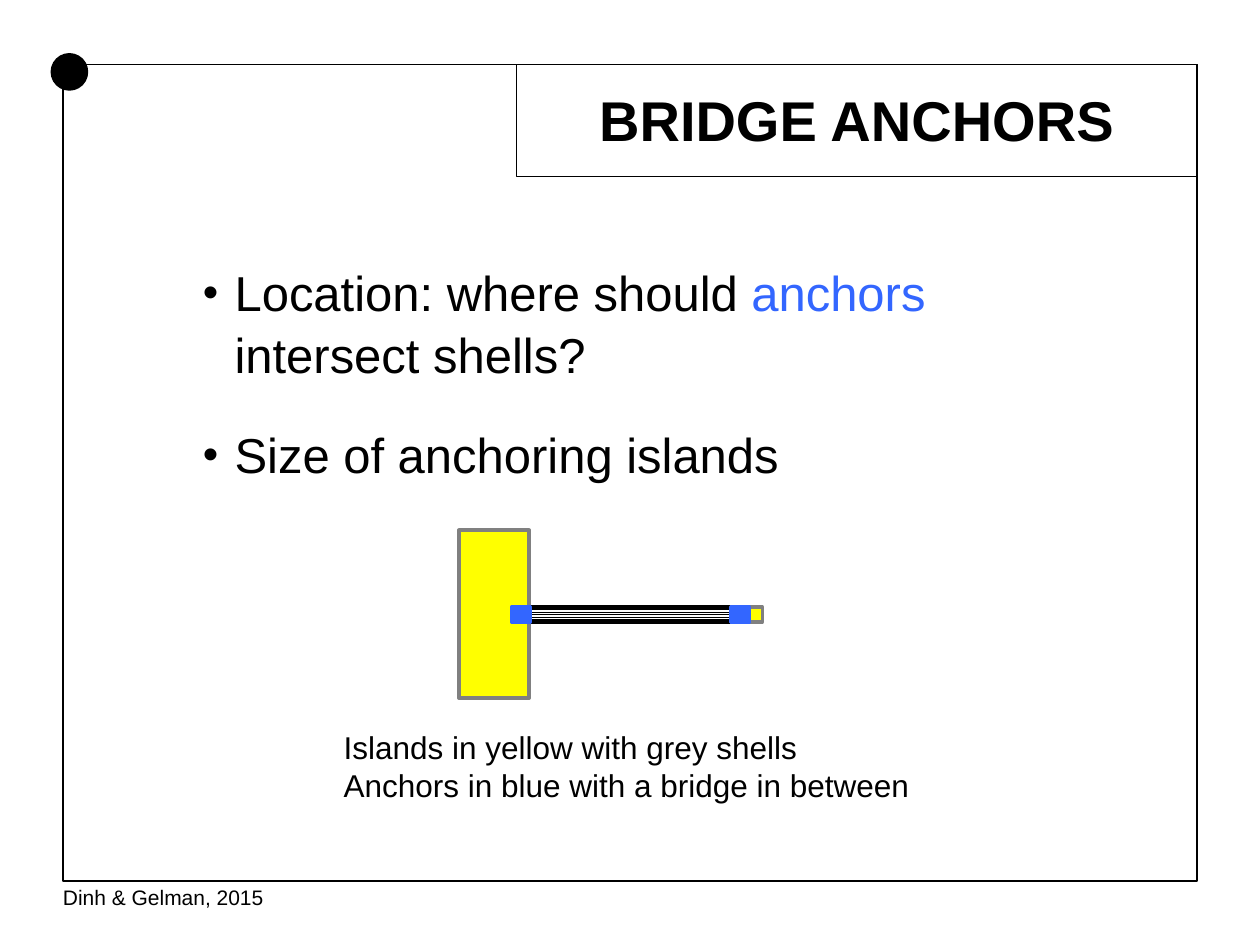
from lxml.etree import SubElement
from pptx import Presentation
from pptx.dml.color import RGBColor
from pptx.enum.dml import MSO_PATTERN as Pattern
from pptx.enum.shapes import MSO_SHAPE as Preset
from pptx.enum.text import MSO_ANCHOR as Anchor, PP_ALIGN as Align
from pptx.oxml.ns import qn
from pptx.util import Cm, Pt

COLORS = {name: RGBColor.from_string(value) for name, value in {
    "black": "000000", "white": "FFFFFF", "blue": "3366FF",
    "yellow": "FFFF00", "grey": "808080"}.items()}

deck = Presentation()
deck.slide_width, deck.slide_height = Cm(25.4), Cm(19.05)
slide = deck.slides.add_slide(deck.slide_layouts[6])


def add_outline(preset, box, fill=None, line="black", weight=0.75):
    """Add a preset shape; box is left, top, width, height in cm."""
    shape = slide.shapes.add_shape(preset, *map(Cm, box))
    shape.shadow.inherit = False
    if fill:
        shape.fill.solid()
        shape.fill.fore_color.rgb = COLORS[fill]
    else:
        shape.fill.background()
    shape.line.color.rgb = COLORS[line]
    shape.line.width = Pt(weight)
    return shape


def add_text(box, paragraphs, size, bold=False, wrap=True):
    """Add a text box; each paragraph is a list of (text, colour) runs."""
    frame = slide.shapes.add_textbox(*map(Cm, box)).text_frame
    frame.word_wrap = wrap
    for index, runs in enumerate(paragraphs):
        paragraph = frame.add_paragraph() if index else frame.paragraphs[0]
        for text, color in runs:
            run = paragraph.add_run()
            run.text = text
            run.font.name, run.font.size, run.font.bold = "Arial", Pt(size), bold
            run.font.color.rgb = COLORS[color]
    return frame


# Page frame
add_outline(Preset.RECTANGLE, (1.27, 1.3, 22.86, 16.46))
add_outline(Preset.RECTANGLE, (10.41, 1.3, 13.72, 2.26))
corner_dot = add_outline(Preset.OVAL, (1.02, 1.07, 0.76, 0.76), fill="black")
corner_dot.line.fill.background()
add_text((1.02, 17.7, 4.6, 0.76), [[("Dinh & Gelman, 2015", "black")]], 12, wrap=False)

# Title
title = add_text((10.41, 1.4, 13.72, 2.26), [[("BRIDGE ANCHORS", "black")]], 32, bold=True)
title.vertical_anchor = Anchor.MIDDLE
title.paragraphs[0].alignment = Align.CENTER
title.paragraphs[0].line_spacing = 0.8

# Questions
questions = add_text((3.84, 5.11, 18.54, 10.59), [
    [("Location: where should ", "black"), ("anchors ", "blue"),
     ("intersect shells?", "black")],
    [("Size of anchoring islands", "black")],
], 28)
for index, question in enumerate(questions.paragraphs):
    question.line_spacing = 1.05
    if index:
        question.space_before = Pt(22)
    properties = question._p.get_or_add_pPr()
    properties.set("marL", str(Cm(0.64)))
    properties.set("indent", str(-Cm(0.64)))
    SubElement(properties, qn("a:buSzPct"), val="90000")
    SubElement(properties, qn("a:buFont"), typeface="Arial")
    SubElement(properties, qn("a:buChar"), char="•")

# Bridge between two islands
bridge_left, bridge_width = 10.67, 4.06
bridge_right = bridge_left + bridge_width
bridge_top, bridge_height = 12.24, 0.3
island_width, anchor_width = 1.42, 0.38

bridge = add_outline(Preset.RECTANGLE,
                     (bridge_left, bridge_top, bridge_width, bridge_height), weight=2)
bridge.fill.patterned()
bridge.fill.pattern = Pattern.LIGHT_HORIZONTAL
bridge.fill.fore_color.rgb = COLORS["black"]
bridge.fill.back_color.rgb = COLORS["white"]

for left, top, width, height, fill, line in [
    (bridge_left - island_width, 10.69, island_width, 3.38, "yellow", "grey"),
    (bridge_right, bridge_top, 0.64, bridge_height, "yellow", "grey"),
    (bridge_left - 0.36, bridge_top, anchor_width, bridge_height, "blue", "blue"),
    (bridge_right, bridge_top, anchor_width, bridge_height, "blue", "blue"),
]:
    add_outline(Preset.RECTANGLE, (left, top, width, height), fill, line, 2)

add_text((6.68, 14.55, 12.04, 1.8), [
    [("Islands in yellow with grey shells", "black")],
    [("Anchors in blue with a bridge in between", "black")],
], 18, wrap=False)

deck.save("out.pptx")
